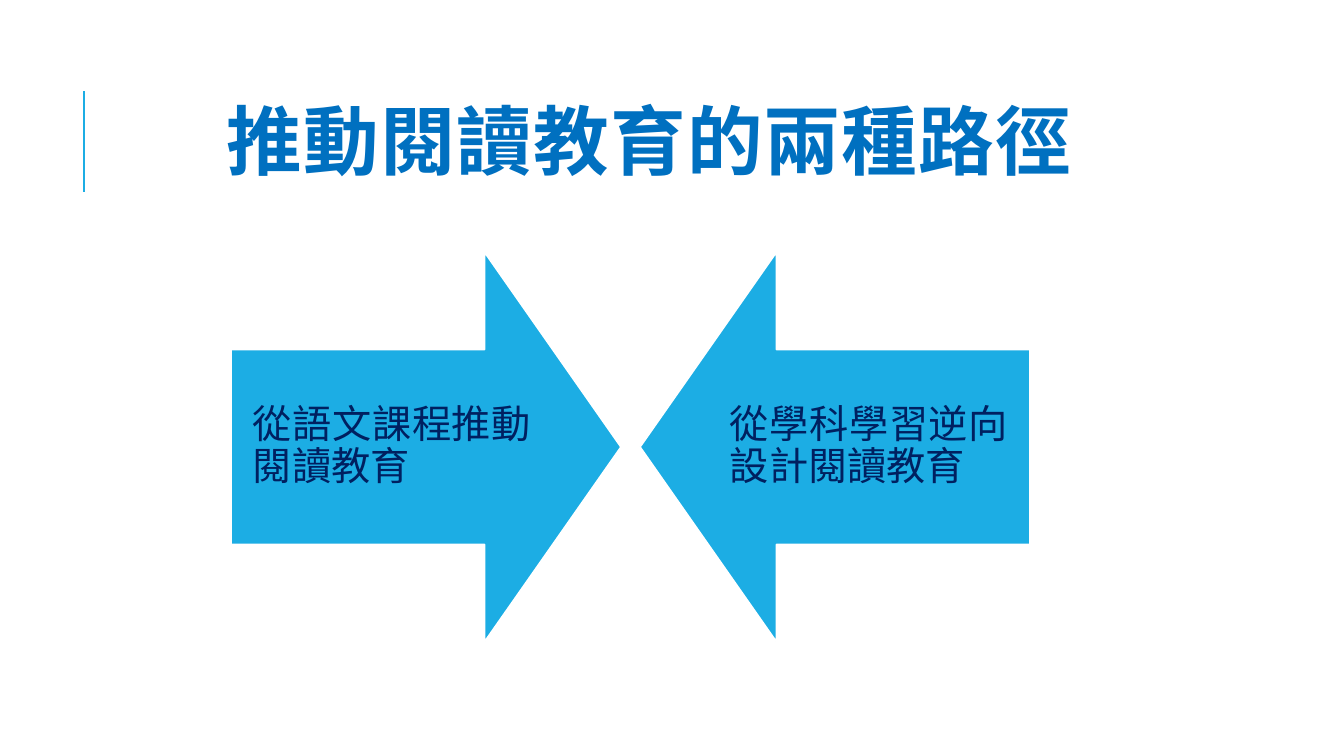
from pptx import Presentation
from pptx import util as u
from pptx.dml.color import RGBColor
from pptx.enum import shapes, text
from pptx.oxml.ns import qn
from lxml import etree

# Content: text, arrow left, text left, rotation
TITLE = "推動閱讀教育的兩種路徑"
PATHS = [
    ("從語文課程推動閱讀教育", 231, 231, 270),
    ("從學科學習逆向設計閱讀教育", 640, 708, 90),
]

SKY = RGBColor(0x1C, 0xAD, 0xE4)
BLUE = RGBColor(0x00, 0x70, 0xC0)
NAVY = RGBColor(0x00, 0x20, 0x60)
WHITE = RGBColor(0xFF, 0xFF, 0xFF)

# Sizes in px
SLIDE_W, SLIDE_H = 1344, 756
ARROW_TOP, ARROW_SIZE = 252, 390
LABEL_W, INSET = 322, 22
LABEL_H = ARROW_SIZE // 2
LABEL_TOP = ARROW_TOP + (ARROW_SIZE - LABEL_H) // 2


def px(n):
    return u.Emu(round(n * 914400 / 100.8))


def box(*sides):
    return [px(n) for n in sides]


def write(sp, words, size, font, color, align, spacing, bold=False, track=0, inset=None):
    tf = sp.text_frame
    tf.word_wrap = True
    tf.auto_size = text.MSO_AUTO_SIZE.NONE
    tf.vertical_anchor = text.MSO_ANCHOR.MIDDLE
    if inset is not None:
        tf.margin_left = tf.margin_right = tf.margin_top = tf.margin_bottom = px(inset)
    p = tf.paragraphs[0]
    p.alignment, p.line_spacing = align, spacing
    r = p.add_run()
    r.text = words
    r.font.size, r.font.name, r.font.bold = u.Pt(size), font, bold
    r.font.color.rgb = color
    if track:
        r.font._element.set("spc", str(track * 100))


prs = Presentation()
prs.slide_width, prs.slide_height = box(SLIDE_W, SLIDE_H)
s = prs.slides.add_slide(prs.slide_layouts[5])

# Accent line beside the title
line = s.shapes.add_connector(shapes.MSO_CONNECTOR.STRAIGHT, *box(84, 192, 84, 91))
line.line.color.rgb = SKY
line.line.width = u.Pt(1.5)
etree.SubElement(line._element.spPr, qn("a:effectLst"))

# Title
title = s.shapes.title
title.left, title.top, title.width, title.height = box(113, 65, 1072, 165)
write(title, TITLE, 54, "Calibri", BLUE, text.PP_ALIGN.CENTER, 0.8, bold=True, track=1)

# Facing arrows with their labels
for words, arrow_left, label_left, turn in PATHS:
    arrow = s.shapes.add_shape(shapes.MSO_SHAPE.DOWN_ARROW,
                               *box(arrow_left, ARROW_TOP, ARROW_SIZE, ARROW_SIZE))
    arrow.rotation = turn
    arrow.adjustments[0], arrow.adjustments[1] = 0.5, 0.35
    arrow.shadow.inherit = False
    arrow.fill.solid()
    arrow.fill.fore_color.rgb = SKY
    arrow.line.color.rgb = WHITE
    arrow.line.width = u.Pt(1.25)

    label = s.shapes.add_textbox(*box(label_left, LABEL_TOP, LABEL_W, LABEL_H))
    write(label, words, 28, "Cabin", NAVY, text.PP_ALIGN.JUSTIFY, 0.9, inset=INSET)

prs.save("out.pptx")
